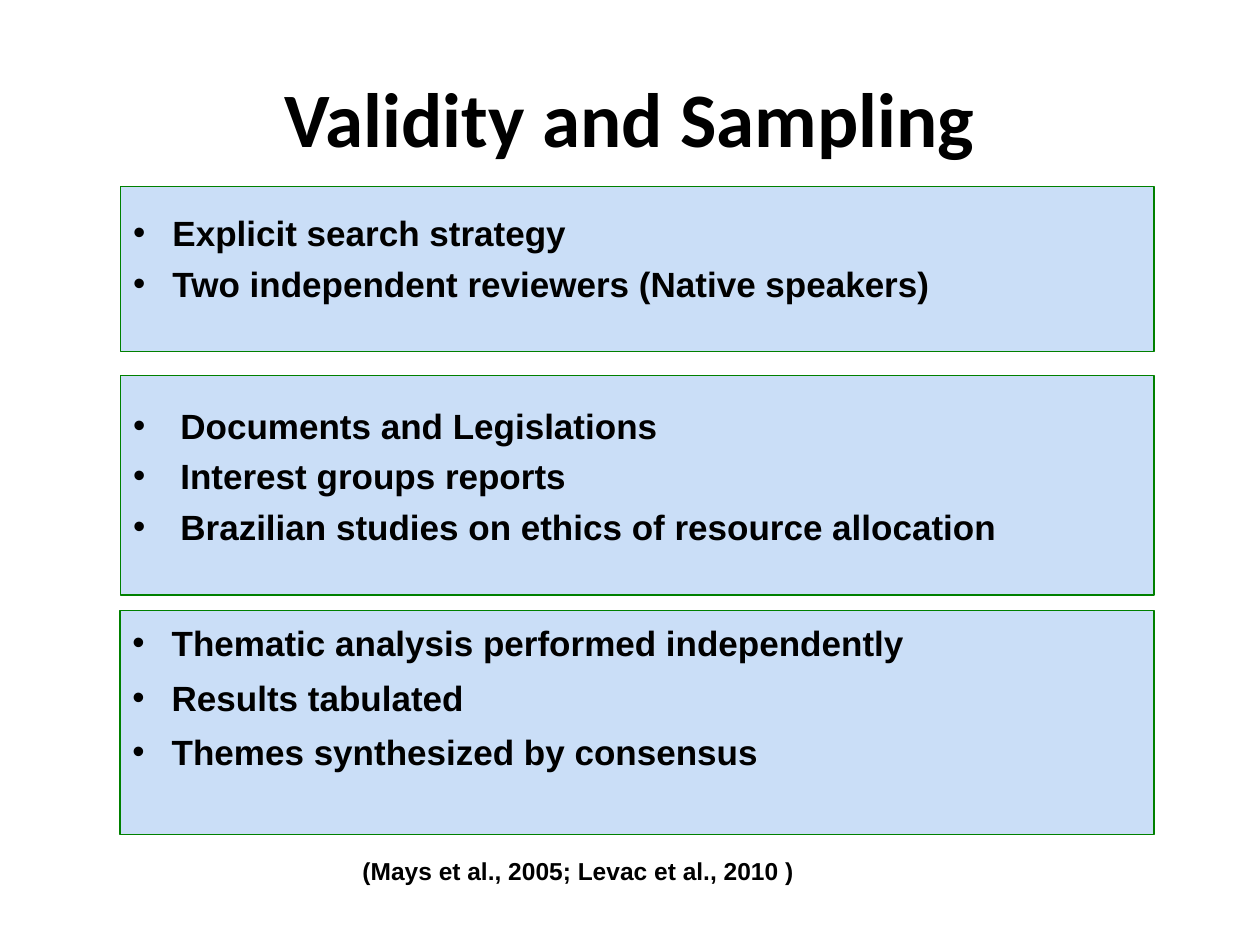
from lxml import etree
from pptx import Presentation
from pptx.dml.color import RGBColor
from pptx.enum.shapes import MSO_SHAPE
from pptx.enum.text import MSO_ANCHOR, PP_ALIGN
from pptx.oxml.ns import qn
from pptx.util import Pt

RECT = MSO_SHAPE.RECTANGLE
TOP, MIDDLE, BOTTOM = MSO_ANCHOR.TOP, MSO_ANCHOR.MIDDLE, MSO_ANCHOR.BOTTOM
LEFT, CENTER = PP_ALIGN.LEFT, PP_ALIGN.CENTER
BLACK = RGBColor(0x00, 0x00, 0x00)
PALE_BLUE = RGBColor(0xCA, 0xDE, 0xF7)
GREEN = RGBColor(0x00, 0x80, 0x00)

PANELS = [
    ((69, 106.5, 590.5, 94.5),
     ["Explicit search strategy",
      "Two independent reviewers (Native speakers)"],
     22.5, 1, dict(vertical_anchor=BOTTOM, margin_bottom=Pt(27))),
    ((69, 214.5, 590.5, 125.5),
     ["Documents and Legislations",
      "Interest groups reports",
      "Brazilian studies on ethics of resource allocation"],
     27, 1, dict(vertical_anchor=BOTTOM, margin_bottom=Pt(27))),
    ((68.5, 349, 591, 128),
     ["Thematic analysis performed independently",
      "Results tabulated",
      "Themes synthesized by consensus"],
     22.5, 1.1, dict(vertical_anchor=TOP)),
]


def set_attrs(obj, values):
    for name, value in values.items():
        setattr(obj, name, value)


def place(shape, box):
    names = ("left", "top", "width", "height")
    set_attrs(shape, {n: Pt(v) for n, v in zip(names, box)})


def write(p, text, size, font="Arial", **layout):
    set_attrs(p, layout)
    r = p.add_run()
    r.text = text
    set_attrs(r.font, dict(name=font, size=Pt(size), bold=True))
    r.font.color.rgb = BLACK


def add_bullet(p, indent):
    pPr = p._p.get_or_add_pPr()
    pPr.set("marL", str(Pt(indent)))
    pPr.set("indent", str(-Pt(indent)))
    etree.SubElement(pPr, qn("a:buFont")).set("typeface", "Arial")
    etree.SubElement(pPr, qn("a:buChar")).set("char", "•")


def add_title(s, box, text):
    sp = s.shapes.title
    place(sp, box)
    set_attrs(sp.text_frame, dict(vertical_anchor=MIDDLE, word_wrap=True))
    write(sp.text_frame.paragraphs[0], text, 44, "Calibri", alignment=CENTER)


def add_panel(s, box, items, indent, spacing, frame):
    sp = s.shapes.add_shape(RECT, *map(Pt, box))
    sp.shadow.inherit = False
    sp.fill.solid()
    sp.fill.fore_color.rgb = PALE_BLUE
    sp.line.color.rgb = GREEN
    sp.line.width = Pt(0.75)
    tf = sp.text_frame
    set_attrs(tf, dict(frame, word_wrap=True))
    for i, item in enumerate(items):
        p = tf.add_paragraph() if i else tf.paragraphs[0]
        write(p, item, 20, alignment=LEFT, space_before=Pt(5),
              line_spacing=spacing)
        add_bullet(p, indent)


def add_citation(s, box, text):
    tf = s.shapes.add_textbox(*map(Pt, box)).text_frame
    tf.word_wrap = True
    write(tf.paragraphs[0], text, 14, alignment=LEFT, space_before=Pt(3),
          line_spacing=1.1)


def main():
    prs = Presentation()
    prs.slide_width, prs.slide_height = Pt(720), Pt(540)
    s = prs.slides.add_slide(prs.slide_layouts[5])
    add_title(s, (36, 21.5, 648, 90), "Validity and Sampling")
    for panel in PANELS:
        add_panel(s, *panel)
    add_citation(s, (200, 484, 264, 26),
                 "(Mays et al., 2005; Levac et al., 2010 )")
    prs.save("out.pptx")


if __name__ == "__main__":
    main()
